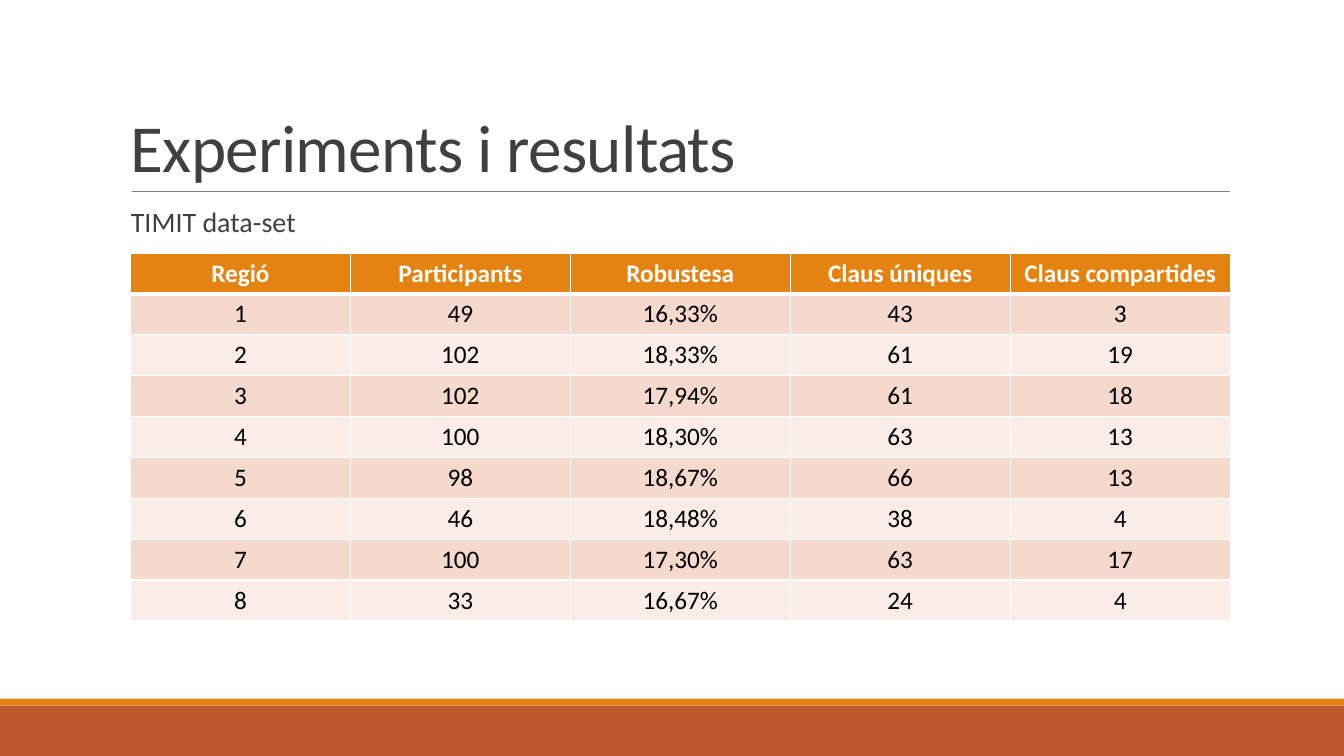
from pptx import Presentation
from pptx.dml.color import RGBColor
from pptx.enum.shapes import MSO_CONNECTOR as Connector, MSO_SHAPE as Shape
from pptx.enum.text import MSO_ANCHOR as Anchor, PP_ALIGN as Align
from pptx.oxml.ns import qn
from pptx.util import Pt
from lxml.etree import SubElement

COLORS = {
    "orange": "E48312", "rust": "BD582C", "rule": "808080", "heading": "404040",
    "odd": "F5D9CC", "even": "FAEDE7", "white": "FFFFFF", "black": "000000",
}
WIDTH, HEIGHT = 960, 540


class Page:
    """Adds styled elements to one slide; all lengths are in points."""
    font = "Calibri"

    def __init__(self, deck):
        self.slide = deck.slides.add_slide(deck.slide_layouts[6])
        self.shapes = self.slide.shapes

    def color(self, name):
        return RGBColor.from_string(COLORS[name])

    def style(self, para, size, color, bold=False):
        para.font.name, para.font.size, para.font.bold = self.font, Pt(size), bold
        para.font.color.rgb = self.color(color)

    def band(self, top, height, color):
        box = self.shapes.add_shape(Shape.RECTANGLE, 0, Pt(top), Pt(WIDTH), Pt(height))
        box.shadow.inherit = False
        box.fill.solid()
        box.fill.fore_color.rgb = self.color(color)
        box.line.fill.background()

    def rule(self, left, right, top):
        line = self.shapes.add_connector(
            Connector.STRAIGHT, Pt(left), Pt(top), Pt(right), Pt(top))
        line.line.color.rgb = self.color("rule")
        line.line.width = Pt(0.5)
        SubElement(line._element.spPr, qn("a:effectLst"))

    def text(self, words, left, top, width, height, size, spacing,
             anchor=Anchor.TOP, tracking=0):
        box = self.shapes.add_textbox(Pt(left), Pt(top), Pt(width), Pt(height))
        frame = box.text_frame
        frame.word_wrap = True
        frame.vertical_anchor = anchor
        para = frame.paragraphs[0]
        para.line_spacing = spacing
        self.style(para, size, "heading")
        span = para.add_run()
        span.text = words
        if tracking:
            span.font._element.set("spc", str(round(tracking * 100)))

    def border(self, cell, side, width):
        line = SubElement(cell._tc.get_or_add_tcPr(), qn(f"a:ln{side}"), w=str(Pt(width)))
        fill = SubElement(line, qn("a:solidFill"))
        SubElement(fill, qn("a:srgbClr"), val=COLORS["white"])

    def table(self, rows, left, top, column_width, row_height):
        count = len(rows[0])
        table = self.shapes.add_table(
            len(rows), count, Pt(left), Pt(top),
            Pt(column_width * count), Pt(row_height * len(rows))).table
        for column in table.columns:
            column.width = Pt(column_width)
        for r, values in enumerate(rows):
            table.rows[r].height = Pt(row_height)
            header = r == 0
            fill = "orange" if header else "odd" if r % 2 else "even"
            for c, value in enumerate(values):
                cell = table.cell(r, c)
                # The line under the header is thicker than the others
                for side in "LRTB":
                    thick = (r, side) in ((0, "B"), (1, "T"))
                    self.border(cell, side, 3 if thick else 1)
                cell.fill.solid()
                cell.fill.fore_color.rgb = self.color(fill)
                cell.text = value
                para = cell.text_frame.paragraphs[0]
                para.alignment = Align.CENTER
                self.style(para, 18, "white" if header else "black", header)


RESULTS = [
    ("Regió", "Participants", "Robustesa", "Claus úniques", "Claus compartides"),
    ("1", "49", "16,33%", "43", "3"),
    ("2", "102", "18,33%", "61", "19"),
    ("3", "102", "17,94%", "61", "18"),
    ("4", "100", "18,30%", "63", "13"),
    ("5", "98", "18,67%", "66", "13"),
    ("6", "46", "18,48%", "38", "4"),
    ("7", "100", "17,30%", "63", "17"),
    ("8", "33", "16,67%", "24", "4"),
]


def main():
    deck = Presentation()
    deck.slide_width, deck.slide_height = Pt(WIDTH), Pt(HEIGHT)
    page = Page(deck)

    # Footer bands and title rule
    page.band(504, 36, "rust")
    page.band(499, 5, "orange")
    page.rule(94.3, 878.8, 136.8)

    # Title and subtitle
    page.text("Experiments i resultats", 86.4, 22.4, 792, 114.2, 48, 0.85,
              Anchor.BOTTOM, tracking=-0.5)
    page.text("TIMIT data-set", 86.4, 145.4, 792, 32, 20, 0.9)

    # Results by region
    page.table(RESULTS, 93.2, 180.7, 157.1, 29.2)

    deck.save("out.pptx")


if __name__ == "__main__":
    main()
